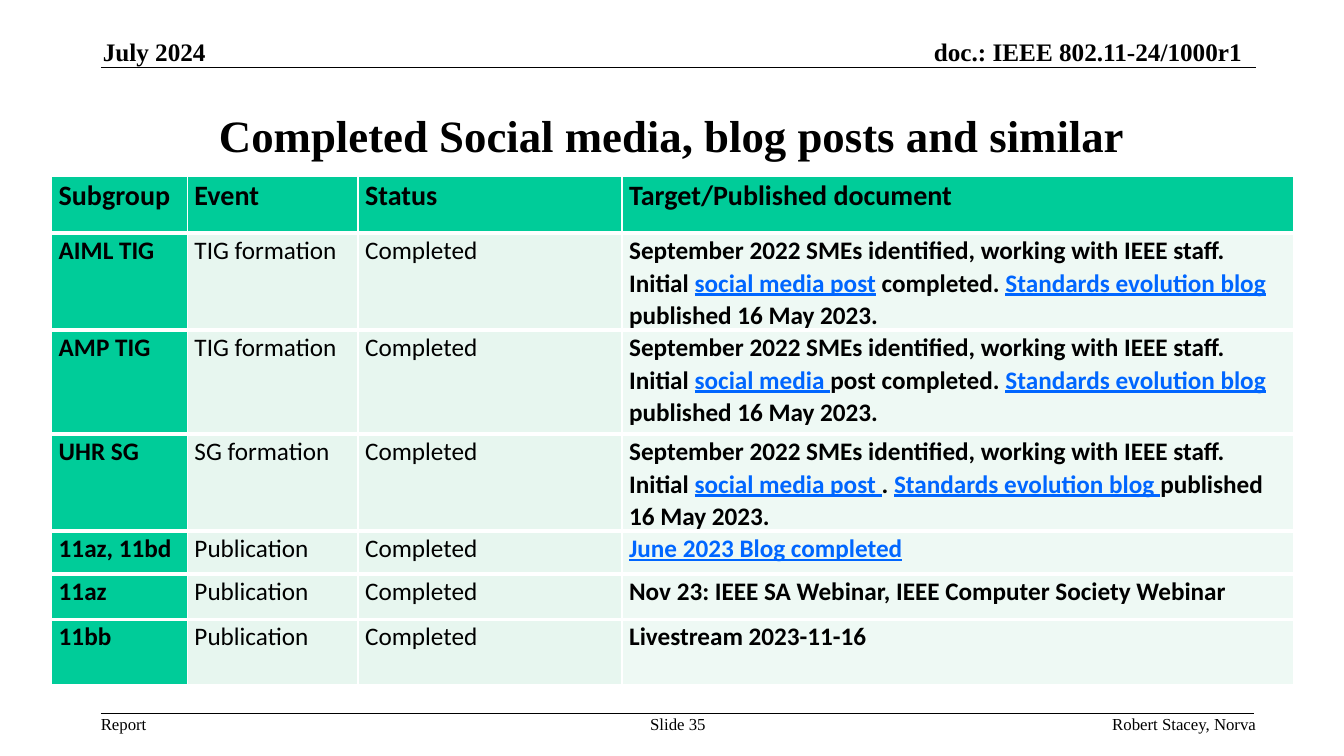
from lxml import etree
from pptx import Presentation
from pptx.dml.color import RGBColor
from pptx.enum.shapes import MSO_CONNECTOR
from pptx.enum.text import MSO_ANCHOR, PP_ALIGN
from pptx.oxml.ns import qn
from pptx.util import Cm, Pt

THEME = {
    "ink": RGBColor(0x00, 0x00, 0x00),
    "link": RGBColor(0x00, 0x66, 0xFF),
    "key": RGBColor(0x00, 0xCC, 0x99),
    "band": RGBColor(0xE7, 0xF6, 0xEF),
    "detail": RGBColor(0xEE, 0xF9, 0xF4),
    "border": "FFFFFF",
    "serif": "Times New Roman",
    "sans": "Calibri",
    "title": Pt(32),
    "column": Pt(20),
    "body": Pt(18),
    "foot": Pt(12),
}


def add_run(p, text, size, font, bold=False, link=False):
    r = p.add_run()
    r.text = text
    r.font.name = THEME[font]
    r.font.size = THEME[size]
    r.font.bold = bold
    r.font.underline = link
    r.font.color.rgb = THEME["link" if link else "ink"]


def add_border(cell, side, width):
    ln = etree.SubElement(cell._tc.get_or_add_tcPr(), qn(f"a:ln{side}"), w=str(Pt(width)))
    fill = etree.SubElement(ln, qn("a:solidFill"))
    etree.SubElement(fill, qn("a:srgbClr"), val=THEME["border"])


prs = Presentation()
prs.slide_width, prs.slide_height = Cm(33.86), Cm(19.05)
s = prs.slides.add_slide(prs.slide_layouts[5])

title = s.shapes.title
title.left, title.top, title.width, title.height = Cm(2.54), Cm(1.9), Cm(28.78), Cm(2.97)
tf = title.text_frame
tf.word_wrap = True
tf.vertical_anchor = MSO_ANCHOR.MIDDLE
tf.paragraphs[0].alignment = PP_ALIGN.CENTER
add_run(tf.paragraphs[0], "Completed Social media, blog posts and similar", "title", "serif", True)

for y, right in [(1.7, 31.65), (17.98, 31.6)]:
    rule = s.shapes.add_connector(MSO_CONNECTOR.STRAIGHT, Cm(2.54), Cm(y), Cm(right), Cm(y))
    rule.line.color.rgb = THEME["ink"]
    rule.line.width = Pt(1)
    etree.SubElement(rule._element.spPr, qn("a:effectLst"))

LEFT, CENTER, RIGHT = PP_ALIGN.LEFT, PP_ALIGN.CENTER, PP_ALIGN.RIGHT
labels = [
    ("July 2024", 2.59, 0.91, 3.73, 0.76, LEFT, "body"),
    ("doc.: IEEE 802.11-24/1000r1", 21.84, 0.91, 9.45, 0.76, RIGHT, "body"),
    ("Report", 2.54, 17.98, 1.17, 0.51, LEFT, "foot"),
    ("Slide 35", 16.33, 17.98, 1.5, 0.51, CENTER, "foot"),
    ("Robert Stacey, Norva", 25.63, 17.98, 6.02, 0.51, RIGHT, "foot"),
]
for text, x, y, w, h, align, size in labels:
    sp = s.shapes.add_textbox(Cm(x), Cm(y), Cm(w), Cm(h))
    tf = sp.text_frame
    tf.word_wrap = False
    tf.margin_left = tf.margin_right = tf.margin_top = tf.margin_bottom = 0
    tf.vertical_anchor = MSO_ANCHOR.BOTTOM if size == "body" else MSO_ANCHOR.TOP
    tf.paragraphs[0].alignment = align
    add_run(tf.paragraphs[0], text, size, "serif", size == "body")

intro = ("September 2022 SMEs identified, working with IEEE staff. Initial ", False)
closing = [("Standards evolution blog ", True), ("published 16 May 2023.", False)]
rows = [
    ("Subgroup", "Event", "Status", [("Target/Published document", False)]),
    ("AIML TIG", "TIG formation", "Completed",
     [intro, ("social media post", True), (" completed. ", False), *closing]),
    ("AMP TIG", "TIG formation", "Completed",
     [intro, ("social media ", True), ("post completed. ", False), *closing]),
    ("UHR SG", "SG formation", "Completed",
     [intro, ("social media post ", True), (". ", False), *closing]),
    ("11az, 11bd", "Publication", "Completed", [("June 2023 Blog completed", True)]),
    ("11az", "Publication", "Completed",
     [("Nov 23: IEEE SA Webinar, IEEE Computer Society Webinar", False)]),
    ("11bb", "Publication", "Completed", [("Livestream 2023-11-16", False)]),
]
widths = [3.42, 4.3, 6.65, 16.93]
heights = [1.42, 2.31, 2.62, 2.31, 1.09, 1.14, 1.63]
table = s.shapes.add_table(len(rows), len(widths), Cm(1.3), Cm(4.45),
                           Cm(sum(widths)), Cm(sum(heights))).table
for column, width in zip(table.columns, widths):
    column.width = Cm(width)
for row, height in zip(table.rows, heights):
    row.height = Cm(height)

last = len(rows) - 1
for i, row in enumerate(rows):
    for j, content in enumerate(row):
        cell = table.cell(i, j)
        cell.margin_left = cell.margin_right = Cm(0.18)
        cell.margin_top = cell.margin_bottom = 0
        add_border(cell, "L", 1)
        add_border(cell, "R", 1)
        add_border(cell, "T", 1 if i == 0 else 3)
        add_border(cell, "B", 1 if i == last else 3)
        cell.fill.solid()
        shade = "key" if i == 0 or j == 0 else "detail" if j == 3 else "band"
        cell.fill.fore_color.rgb = THEME[shade]
        p = cell.text_frame.paragraphs[0]
        p.line_spacing = 1.07
        for text, link in content if j == 3 else [(content, False)]:
            add_run(p, text, "body" if i else "column", "sans", shade != "band", link)

prs.save("out.pptx")
